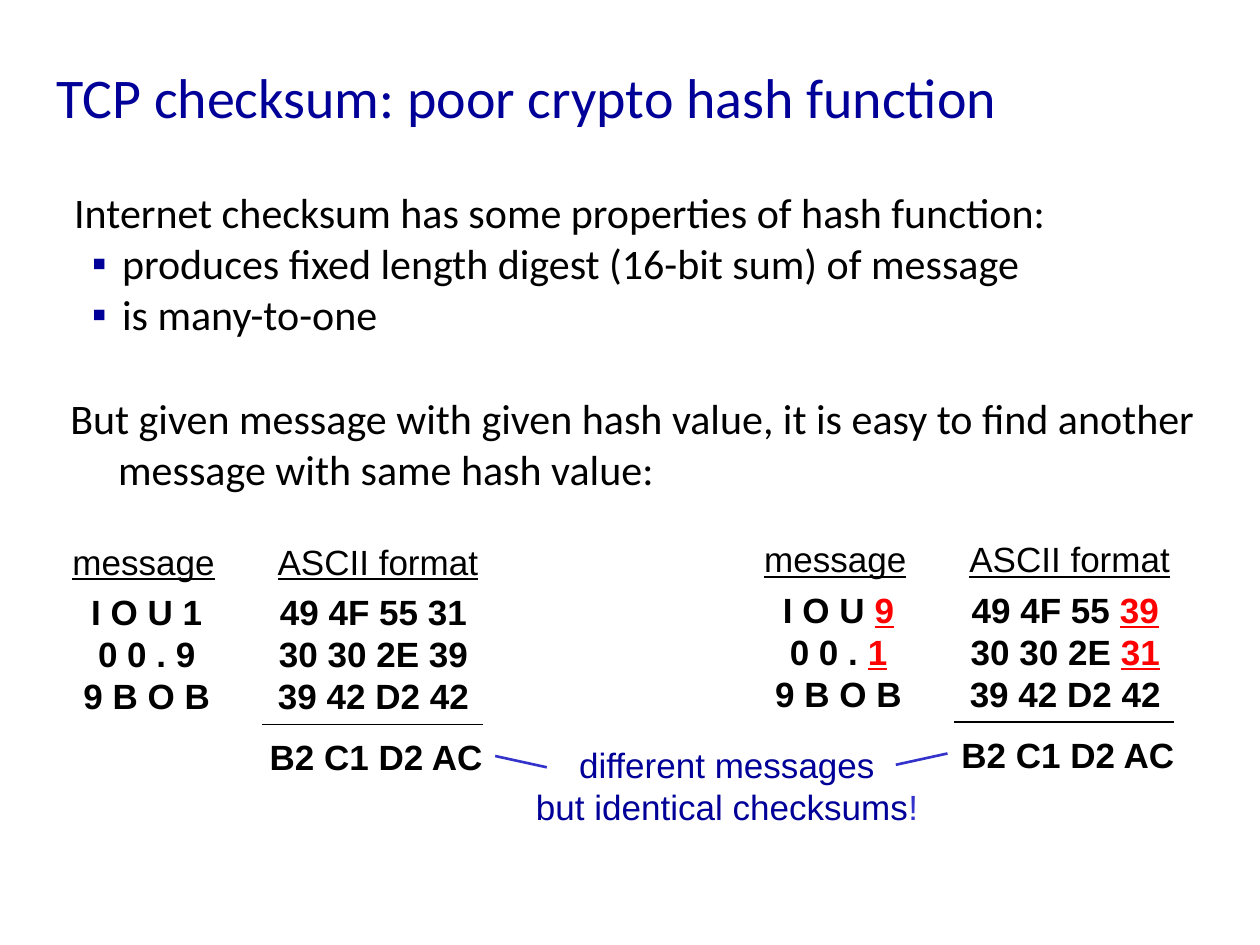
from lxml.etree import SubElement
from pptx import Presentation
from pptx.dml.color import RGBColor
from pptx.enum.shapes import MSO_CONNECTOR as Connector
from pptx.enum.text import MSO_ANCHOR as Anchor, MSO_AUTO_SIZE as AutoSize, PP_ALIGN as Align
from pptx.oxml.ns import qn
from pptx.util import Inches, Pt

NAVY = RGBColor(0x00, 0x00, 0x99)
BLUE = RGBColor(0x33, 0x33, 0xCC)
RED = RGBColor(0xFF, 0x00, 0x00)
BLACK = RGBColor(0x00, 0x00, 0x00)


class ChecksumSlide:
    """Style and drawing methods for the checksum slide."""

    heading_font = "Calibri"
    label_font = "Arial"
    body_size = Pt(24)
    label_size = Pt(20)

    def __init__(self, deck):
        self.page = deck.slides.add_slide(deck.slide_layouts[6])

    def frame(self, left, top, width, height, wrap=True):
        box = self.page.shapes.add_textbox(Inches(left), Inches(top), Inches(width), Inches(height))
        box.text_frame.word_wrap = wrap
        return box.text_frame

    def style(self, span, font, size, color, bold=False, underline=False):
        span.font.name = font
        span.font.size = size
        span.font.color.rgb = color
        span.font.bold = bold
        span.font.underline = underline

    def title(self, text, *area):
        frame = self.frame(*area)
        frame.vertical_anchor = Anchor.MIDDLE
        frame.text = text
        self.style(frame.paragraphs[0].runs[0], self.heading_font, Pt(32), NAVY)

    def body(self, lead, bullets, *area, spacing=1.0):
        frame = self.frame(*area)
        frame.text = "\n".join([lead, *bullets])
        for index, para in enumerate(frame.paragraphs):
            para.line_spacing = spacing
            para.space_before = Pt(4.8)
            self.style(para.runs[0], self.heading_font, self.body_size, BLACK)
            self.indent(para, 0.24 if index else 0.38, bulleted=index > 0)

    def indent(self, para, hanging, bulleted):
        props = para._p.get_or_add_pPr()
        props.set("marL", str(Inches(0.38)))
        props.set("indent", str(-Inches(hanging)))
        if bulleted:
            color = SubElement(props, qn("a:buClr"))
            SubElement(color, qn("a:srgbClr"), val=str(NAVY))
            SubElement(props, qn("a:buFont"), typeface=self.label_font)
            SubElement(props, qn("a:buChar"), char="▪")

    def label(self, lines, *area, color=BLACK, accent=RED, accent_underline=True, **format):
        frame = self.frame(*area, wrap=False)
        frame.auto_size = AutoSize.SHAPE_TO_FIT_TEXT
        frame.text = "\n".join(plain for plain, _ in lines)
        for para, (_, marked) in zip(frame.paragraphs, lines):
            para.alignment = Align.CENTER
            self.style(para.runs[0], self.label_font, self.label_size, color, **format)
            if marked:
                span = para.add_run()
                span.text = marked
                self.style(span, self.label_font, self.label_size, accent,
                           **{**format, "underline": accent_underline})

    def line(self, start, end, color, weight):
        ends = [Inches(value) for value in (*start, *end)]
        line = self.page.shapes.add_connector(Connector.STRAIGHT, *ends)
        line.line.color.rgb = color
        line.line.width = Pt(weight)
        SubElement(line._element.spPr, qn("a:effectLst"))

    def example(self, left, top, message, codes):
        self.label(message, left + 0.09, top + 0.4, 1.21, 1.11, bold=True)
        self.label(codes, left + 1.63, top + 0.4, 1.73, 1.11, bold=True)
        self.label([("message", "")], left, top, 1.34, 0.44, underline=True)
        self.label([("ASCII format", "")], left + 1.63, top, 1.8, 0.44, underline=True)
        self.line((left + 1.61, top + 1.51), (left + 3.36, top + 1.51), BLACK, 0.75)
        self.label([("B2 C1 D2 AC", "")], left + 1.56, top + 1.55, 1.91, 0.44, bold=True)


def main():
    deck = Presentation()
    deck.slide_width, deck.slide_height = Inches(10), Inches(7.5)
    slide = ChecksumSlide(deck)
    slide.title("TCP checksum: poor crypto hash function", 0.35, 0.3, 8.88, 0.92)
    slide.body(
        "Internet checksum has some properties of hash function:",
        ["produces fixed length digest (16-bit sum) of message", "is many-to-one"],
        0.49, 1.49, 9.21, 2.32, spacing=0.85,
    )
    slide.body(
        "But given message with given hash value, it is easy to find another "
        "message with same hash value:",
        [], 0.46, 3.07, 9.21, 1.07,
    )
    slide.example(
        0.47, 4.24,
        [("I O U 1", ""), ("0 0 . 9", ""), ("9 B O B", "")],
        [("49 4F 55 31", ""), ("30 30 2E 39", ""), ("39 42 D2 42", "")],
    )
    slide.example(
        5.96, 4.22,
        [("I O U ", "9"), ("0 0 . ", "1"), ("9 B O B", "")],
        [("49 4F 55 ", "39"), ("30 30 2E ", "31"), ("39 42 D2 42", "")],
    )
    slide.label(
        [("different messages", ""), ("but identical checksums", "!")],
        4.09, 5.85, 3.36, 0.77, color=NAVY, accent=BLUE, accent_underline=False,
    )
    slide.line((4.34, 6.09), (3.93, 6), BLUE, 1.5)
    slide.line((7.11, 6.07), (7.52, 5.98), BLUE, 1.5)
    deck.save("out.pptx")


if __name__ == "__main__":
    main()
